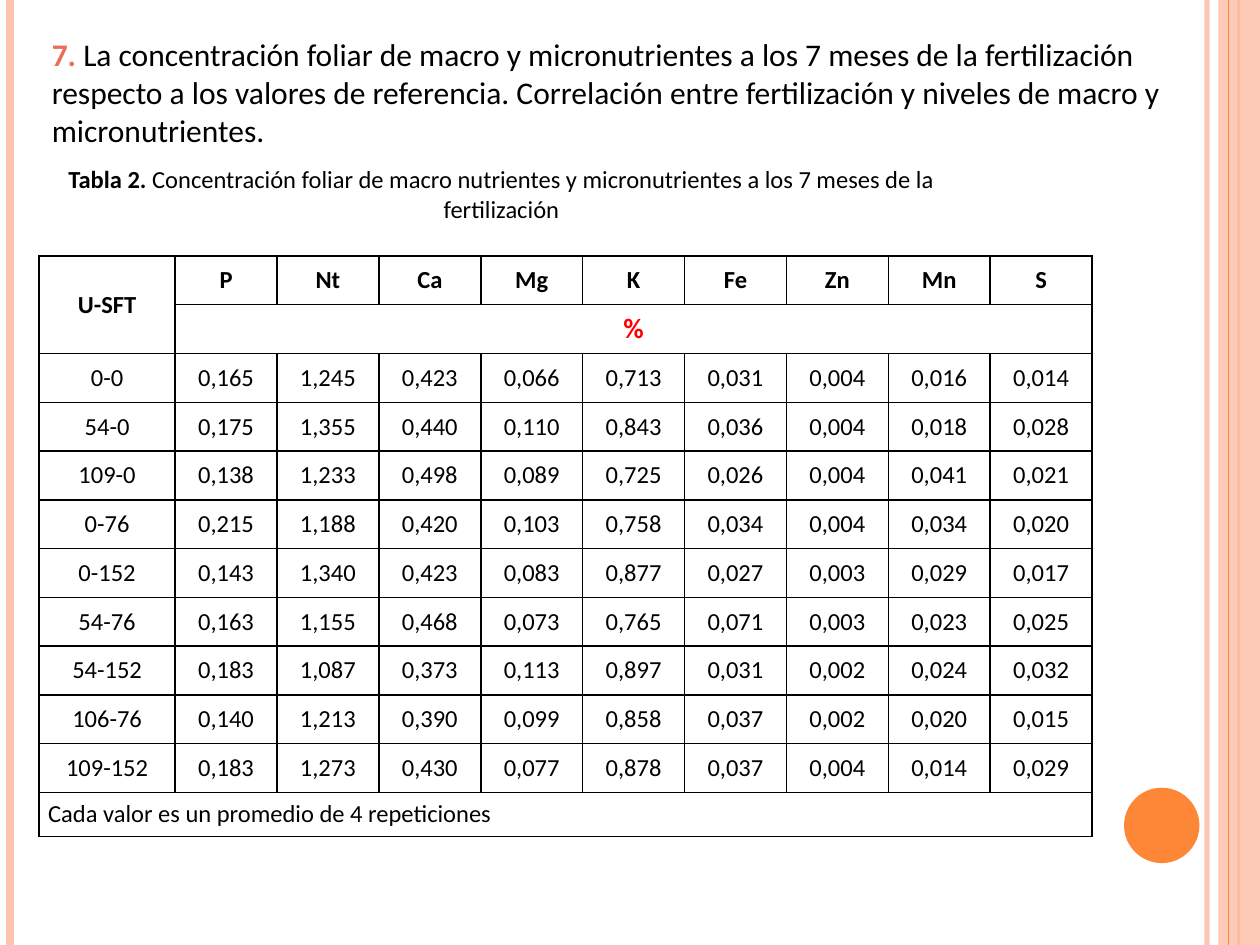
from lxml import etree
from pptx import Presentation
from pptx.dml.color import RGBColor
from pptx.enum.shapes import MSO_CONNECTOR, MSO_SHAPE
from pptx.enum.text import MSO_ANCHOR, MSO_AUTO_SIZE, PP_ALIGN
from pptx.oxml.ns import qn
from pptx.util import Cm, Pt

LINE = MSO_CONNECTOR.STRAIGHT
RECT, OVAL = MSO_SHAPE.RECTANGLE, MSO_SHAPE.OVAL
TOP, MIDDLE = MSO_ANCHOR.TOP, MSO_ANCHOR.MIDDLE
LEFT, CENTER = PP_ALIGN.LEFT, PP_ALIGN.CENTER
NO_FIT = MSO_AUTO_SIZE.NONE

FONT = "Calibri"
COLORS = {"black": "000000", "red": "FF0000", "coral": "EB6E5A",
          "peach": "FEC3AE", "orange": "FE8637"}
WIDE, HIGH = 25.4, 19.05

BARS = [(24.33, "peach", 3, 93), (0.2, "peach", 4.5, 100),
        (24.97, "orange", 1.5, 100), (24.77, "orange", 0.75, 100)]

TITLE = [("7. ", True, "coral"),
         ("La concentración foliar de macro y micronutrientes a los 7 meses "
          "de la fertilización respecto a los valores de referencia. "
          "Correlación entre fertilización y niveles de macro y "
          "micronutrientes.", False, "black")]
CAPTION = [("Tabla 2.", True, "black"),
           (" Concentración foliar de macro nutrientes y micronutrientes a "
            "los 7 meses de la fertilización", False, "black")]

HEADS = "U-SFT P Nt Ca Mg K Fe Zn Mn S".split()
UNIT = "%"
ROWS = [row.split() for row in (
    "0-0 0,165 1,245 0,423 0,066 0,713 0,031 0,004 0,016 0,014",
    "54-0 0,175 1,355 0,440 0,110 0,843 0,036 0,004 0,018 0,028",
    "109-0 0,138 1,233 0,498 0,089 0,725 0,026 0,004 0,041 0,021",
    "0-76 0,215 1,188 0,420 0,103 0,758 0,034 0,004 0,034 0,020",
    "0-152 0,143 1,340 0,423 0,083 0,877 0,027 0,003 0,029 0,017",
    "54-76 0,163 1,155 0,468 0,073 0,765 0,071 0,003 0,023 0,025",
    "54-152 0,183 1,087 0,373 0,113 0,897 0,031 0,002 0,024 0,032",
    "106-76 0,140 1,213 0,390 0,099 0,858 0,037 0,002 0,020 0,015",
    "109-152 0,183 1,273 0,430 0,077 0,878 0,037 0,004 0,014 0,029")]
NOTE = "Cada valor es un promedio de 4 repeticiones"


def color(name):
    return RGBColor.from_string(COLORS[name])


def style(font, size, bold, tint):
    font.name, font.size, font.bold = FONT, Pt(size), bold
    font.color.rgb = color(tint)


def fade(shape, share):
    for node in shape.element.spPr.iter(qn("a:srgbClr")):
        etree.SubElement(node, qn("a:alpha"), val=str(share * 1000))


def add_bar(slide, x, tint, width, share, high):
    bar = slide.shapes.add_connector(LINE, Cm(x), 0, Cm(x), Cm(high))
    bar.line.color.rgb = color(tint)
    bar.line.width = Pt(width)
    etree.SubElement(bar.element.spPr, qn("a:effectLst"))
    if share < 100:
        fade(bar, share)


def add_solid(slide, kind, box, tint):
    shape = slide.shapes.add_shape(kind, *map(Cm, box))
    shape.shadow.inherit = False
    shape.fill.solid()
    shape.fill.fore_color.rgb = color(tint)
    shape.line.fill.background()
    return shape


def add_frame(slide, box):
    x, y, wide, high = box
    *back, front = BARS
    for bar in back:
        add_bar(slide, *bar, high)
    band = add_solid(slide, RECT, (x + wide - 0.84, y, 0.84, high), "peach")
    fade(band, 87)
    add_bar(slide, *front, high)
    add_solid(slide, OVAL, (x + wide - 2.74, y + 15.88, 1.52, 1.52), "orange")


def fill_text(shape, box, runs, size, align, anchor):
    shape.left, shape.top, shape.width, shape.height = map(Cm, box)
    frame = shape.text_frame
    frame.word_wrap = True
    frame.auto_size = NO_FIT
    frame.vertical_anchor = anchor
    para = frame.paragraphs[0]
    para.alignment = align
    for text, bold, tint in runs:
        run = para.add_run()
        run.text = text
        style(run.font, size, bold, tint)


def add_title(slide, box):
    title = slide.shapes.title
    slide.shapes.element.append(title.element)
    fill_text(title, box, TITLE, 18, LEFT, TOP)


def add_caption(slide, box):
    label = slide.shapes.add_textbox(*map(Cm, box))
    fill_text(label, box, CAPTION, 14, CENTER, MIDDLE)


def add_edges(cell):
    props = cell._tc.get_or_add_tcPr()
    for spot, side in enumerate(("a:lnL", "a:lnR", "a:lnT", "a:lnB")):
        edge = etree.Element(qn(side), w=str(Pt(1)))
        paint = etree.SubElement(edge, qn("a:solidFill"))
        etree.SubElement(paint, qn("a:srgbClr"), val=COLORS["black"])
        props.insert(spot, edge)


def set_cell(cell, text, size=14, bold=False, tint="black", align=CENTER):
    para = cell.text_frame.paragraphs[0]
    para.text = text
    para.alignment = align
    style(para.font, size, bold, tint)


def add_grid(slide, box):
    x, y, wide, high = box
    count, cols = len(ROWS) + 3, len(HEADS)
    first, last = 2.74, 0.89
    grid = slide.shapes.add_table(count, cols, *map(Cm, box)).table
    grid.first_row = grid.horz_banding = False
    for n, col in enumerate(grid.columns):
        col.width = Cm((wide - first) / (cols - 1) if n else first)
    for n, row in enumerate(grid.rows):
        row.height = Cm((high - last) / (count - 1) if n < count - 1 else last)
    for cell in grid.iter_cells():
        cell.fill.background()
        cell.vertical_anchor = MIDDLE
        cell.margin_left = cell.margin_right = Cm(0.18)
        cell.margin_top = cell.margin_bottom = 0
        add_edges(cell)
    for n, head in enumerate(HEADS):
        set_cell(grid.cell(0, n), head, bold=True)
    set_cell(grid.cell(1, 1), UNIT, 16, True, "red")
    for r, row in enumerate(ROWS, 2):
        for c, text in enumerate(row):
            set_cell(grid.cell(r, c), text)
    set_cell(grid.cell(count - 1, 0), NOTE, align=LEFT)
    grid.cell(0, 0).merge(grid.cell(1, 0))
    grid.cell(1, 1).merge(grid.cell(1, cols - 1))
    grid.cell(count - 1, 0).merge(grid.cell(count - 1, cols - 1))


def main():
    deck = Presentation()
    deck.slide_width, deck.slide_height = Cm(WIDE), Cm(HIGH)
    slide = deck.slides.add_slide(deck.slide_layouts[5])
    add_frame(slide, (0, 0, WIDE, HIGH))
    add_title(slide, (0.79, 0.58, 23.83, 3.33))
    add_caption(slide, (0.79, 3.18, 18.64, 1.45))
    add_grid(slide, (0.79, 5.16, 21.23, 11.71))
    deck.save("out.pptx")


if __name__ == "__main__":
    main()
